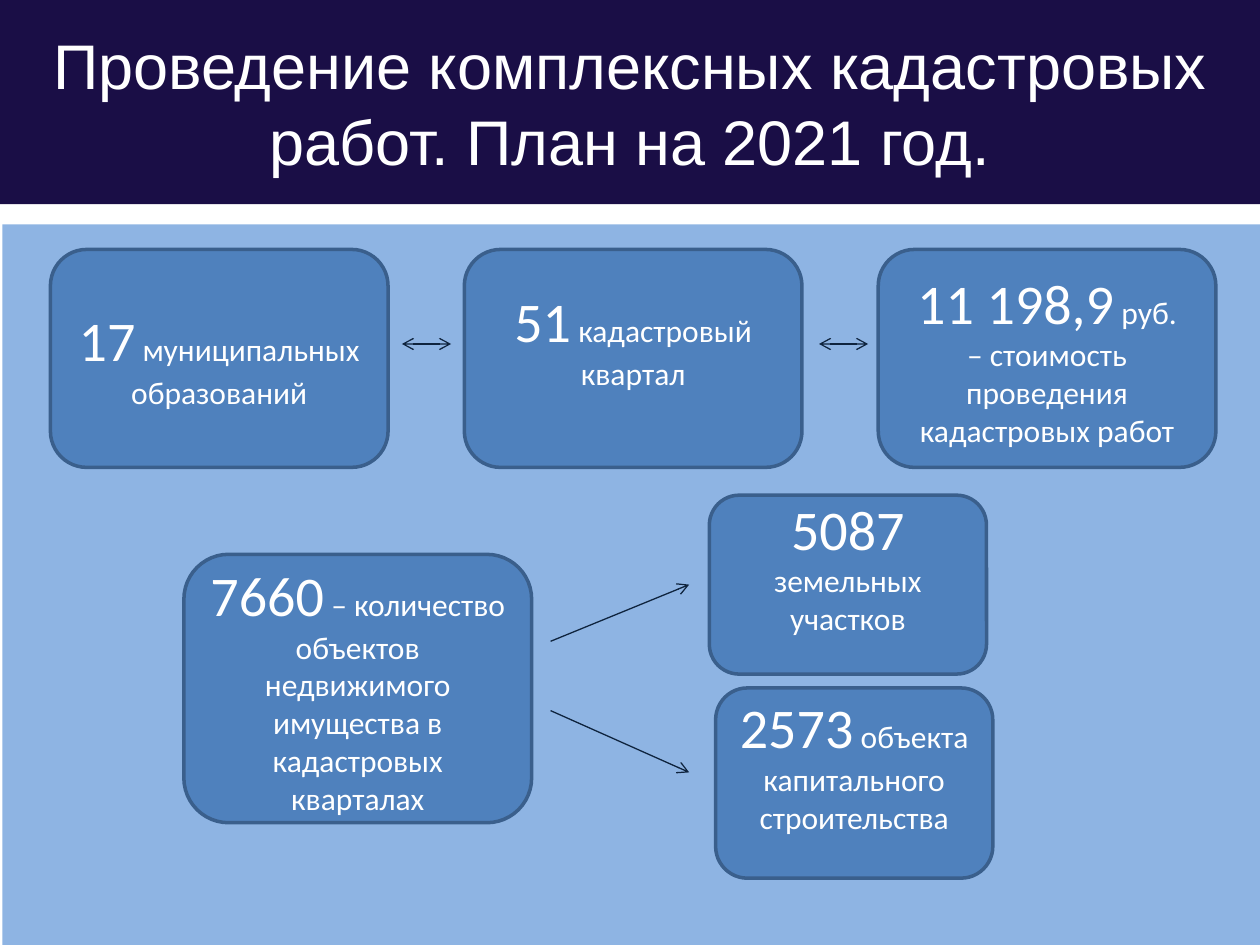
from dataclasses import dataclass

from lxml.etree import SubElement
from pptx import Presentation
from pptx.dml.color import RGBColor
from pptx.enum.shapes import MSO_CONNECTOR, MSO_SHAPE
from pptx.enum.text import MSO_ANCHOR, PP_ALIGN
from pptx.oxml.ns import qn
from pptx.util import Inches, Pt

NAVY, PALE, BLUE, EDGE = "1A0E46", "8EB4E3", "4F81BD", "3A5F8C"
WHITE, INK = "FFFFFF", "0F243E"


@dataclass
class Card:
    left: float
    top: float
    width: float
    height: float
    number: str
    label: str
    bottom_inset: float = 0.05


@dataclass
class Arrow:
    start: tuple[float, float]
    end: tuple[float, float]
    both_ends: bool = False


ROW_LEFT, ROW_TOP, ROW_STEP = 0.4, 1.98, 3.285
ROW_SIZE = (2.68, 1.73)
RAISED = 0.35  # bottom inset that lifts the text by half a line
ROW = [
    ("17", " муниципальных образований", 0.05),
    ("51", " кадастровый квартал", RAISED),
    ("11 198,9", " руб.\v– стоимость проведения кадастровых работ", 0.05),
]
CARDS = [
    Card(ROW_LEFT + i * ROW_STEP, ROW_TOP, *ROW_SIZE, *content)
    for i, content in enumerate(ROW)
] + [
    Card(1.46, 4.4, 2.76, 2.13, "7660",
         " – количество объектов недвижимого имущества в кадастровых кварталах"),
    Card(5.63, 3.93, 2.2, 1.42, "5087", " земельных участков", RAISED),
    Card(5.68, 5.46, 2.2, 1.51, "2573", " объекта капитального строительства", RAISED),
]
ARROWS = [
    Arrow((4.37, 5.64), (5.47, 6.13)),
    Arrow((4.37, 5.09), (5.47, 4.64)),
    Arrow((3.19, 2.73), (3.58, 2.73), True),
    Arrow((6.5, 2.73), (6.89, 2.73), True),
]


def rgb(color: str) -> RGBColor:
    return RGBColor.from_string(color)


def fill(sp, color: str) -> None:
    sp.fill.solid()
    sp.fill.fore_color.rgb = rgb(color)


def add_run(p, text: str, size: float, font: str) -> None:
    """Add white text; a vertical tab marks a line break."""
    for i, line in enumerate(text.split("\v")):
        if i:
            p.add_line_break()
        r = p.add_run()
        r.text = line
        r.font.size = Pt(size)
        r.font.name = font
        r.font.color.rgb = rgb(WHITE)


def add_box(slide, kind, left: float, top: float, width: float, height: float, color: str):
    sp = slide.shapes.add_shape(
        kind, Inches(left), Inches(top), Inches(width), Inches(height))
    sp.shadow.inherit = False
    fill(sp, color)
    sp.line.fill.background()
    return sp


def add_title(slide, text: str) -> None:
    sp = slide.shapes.title
    sp.left, sp.top, sp.width, sp.height = 0, 0, Inches(10), Inches(1.62)
    fill(sp, NAVY)
    tf = sp.text_frame
    tf.vertical_anchor = MSO_ANCHOR.MIDDLE
    p = tf.paragraphs[0]
    p.alignment = PP_ALIGN.CENTER
    add_run(p, text, 36, "Arial")


def add_card(slide, card: Card) -> None:
    sp = add_box(slide, MSO_SHAPE.ROUNDED_RECTANGLE,
                 card.left, card.top, card.width, card.height, BLUE)
    sp.line.color.rgb = rgb(EDGE)
    sp.line.width = Pt(2)
    tf = sp.text_frame
    tf.word_wrap = True
    tf.vertical_anchor = MSO_ANCHOR.MIDDLE
    tf.margin_bottom = Inches(card.bottom_inset)
    p = tf.paragraphs[0]
    p.alignment = PP_ALIGN.CENTER
    add_run(p, card.number, 32, "Calibri")
    add_run(p, card.label, 18, "Calibri")


def add_arrow(slide, arrow: Arrow) -> None:
    points = [Inches(v) for v in arrow.start + arrow.end]
    line = slide.shapes.add_connector(MSO_CONNECTOR.STRAIGHT, *points)
    line.line.color.rgb = rgb(INK)
    line.line.width = Pt(0.75)
    ln = line.line._get_or_add_ln()
    for tag in (["a:headEnd"] if arrow.both_ends else []) + ["a:tailEnd"]:
        SubElement(ln, qn(tag), type="arrow")
    SubElement(line._element.spPr, qn("a:effectLst"))


def main() -> None:
    prs = Presentation()
    prs.slide_width, prs.slide_height = Inches(10), Inches(7.5)
    slide = prs.slides.add_slide(prs.slide_layouts[5])
    add_title(slide, "Проведение комплексных кадастровых работ. План на 2021 год.")
    add_box(slide, MSO_SHAPE.RECTANGLE, 0.02, 1.78, 10, 5.72, PALE)
    for card in CARDS:
        add_card(slide, card)
    for arrow in ARROWS:
        add_arrow(slide, arrow)
    prs.save("out.pptx")


if __name__ == "__main__":
    main()
